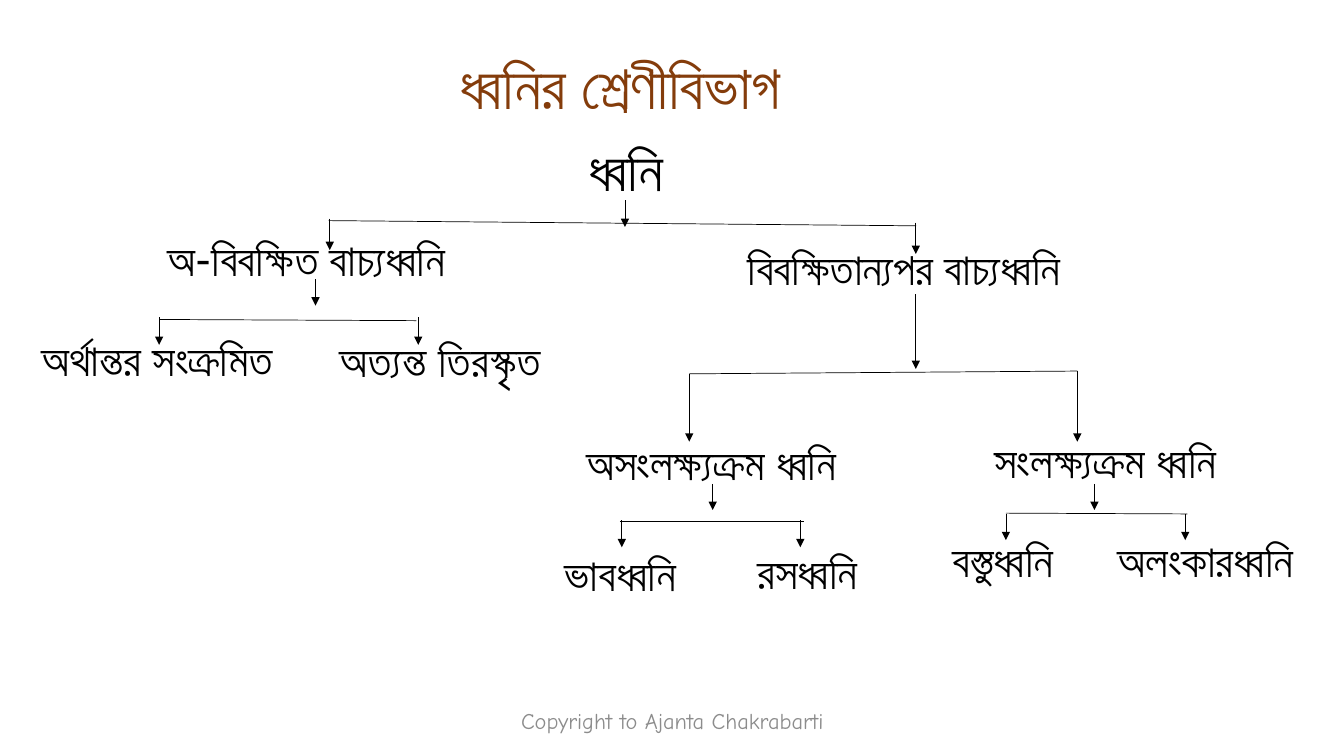
"""Build a slide with a tree of the classes of dhvani."""
from lxml.etree import SubElement
from pptx import Presentation
from pptx.dml.color import RGBColor
from pptx.enum.shapes import MSO_CONNECTOR as Connector
from pptx.enum.text import MSO_ANCHOR as Anchor, PP_ALIGN as Align
from pptx.oxml.ns import qn
from pptx.util import Cm, Pt

COLORS = {"ink": "000000", "title": "843C0B", "footer": "8C8C8C"}
INSET = 0.25
LABEL_HEIGHT = 1.63

TITLE = ("ধ্বনির শ্রেণীবিভাগ", (10.49, 1.07, 10.77, 2.13))
ROOT = ("ধ্বনি", (14.58, 3.3, 2.79, 1.96))
FOOTER = ("Copyright to Ajanta Chakrabarti", (11.23, 17.65, 11.43, 1.02))

# text, left, top, width, indent
LABELS = [
    ("অ-বিবক্ষিত বাচ্যধ্বনি", 3.12, 5.72, 9.25, 0.84),
    ("বিবক্ষিতান্যপর বাচ্যধ্বনি", 18.34, 5.94, 9.25, 0.25),
    ("অর্থান্তর সংক্রমিত", 0.79, 8.23, 6.43, 0),
    ("অত্যন্ত তিরস্কৃত", 8.31, 8.26, 5.82, 0),
    ("অসংলক্ষ্যক্রম ধ্বনি", 14.27, 10.85, 7.39, 0.25),
    ("সংলক্ষ্যক্রম ধ্বনি", 24.56, 10.8, 6.71, 0.25),
    ("ভাবধ্বনি", 13.97, 13.64, 3.4, 0),
    ("রসধ্বনি", 18.59, 13.61, 3.68, 0.25),
    ("বস্তুধ্বনি", 23.5, 13.31, 3.68, 0.25),
    ("অলংকারধ্বনি", 27.91, 13.31, 5.08, 0),
]

# each arrow is x, top, bottom; each bar is x1, y1, x2, y2
BRANCHES = [
    {"stem": (15.75, 5.05, 5.72), "bar": (8.28, 5.56, 23.09, 5.69),
     "drops": [(8.31, 5.51, 6.3), (23.08, 5.61, 6.4)]},
    {"stem": (7.95, 7.04, 7.7), "bar": (4.01, 8.05, 10.49, 8.08),
     "drops": [(4.01, 8.0, 8.69), (10.54, 8.0, 8.69)]},
    {"stem": (23.08, 7.42, 9.3), "bar": (17.37, 9.42, 27.15, 9.35),
     "drops": [(17.37, 9.42, 11.13), (27.15, 9.35, 11.13)]},
    {"stem": (17.96, 12.19, 12.85), "bar": (15.62, 13.13, 20.27, 13.13),
     "drops": [(15.67, 13.11, 13.79), (20.17, 13.11, 13.79)]},
    {"stem": (27.58, 12.19, 12.85), "bar": (25.35, 12.93, 29.92, 12.95),
     "drops": [(25.35, 12.95, 13.61), (29.87, 12.95, 13.61)]},
]


def write(box, text, size=32, font="Lato", color="ink", indent=0,
          align=Align.LEFT, anchor=Anchor.TOP):
    """Put formatted text into a box."""
    frame = box.text_frame
    frame.word_wrap = True
    frame.vertical_anchor = anchor
    frame.margin_left = Cm(INSET + indent)
    frame.margin_right = Cm(INSET if align == Align.CENTER else 0)
    para = frame.paragraphs[0]
    para.alignment = align
    span = para.add_run()
    span.text = text
    span.font.size = Pt(size)
    span.font.name = font
    span.font.color.rgb = RGBColor.from_string(COLORS[color])


def add_text(page, text, place, **style):
    """Add a text box at a place given in centimetres."""
    write(page.shapes.add_textbox(*map(Cm, place)), text, **style)


def add_line(page, x1, y1, x2, y2, arrow=False):
    """Add a thin line, with an arrowhead at its end if wanted."""
    line = page.shapes.add_connector(
        Connector.STRAIGHT, Cm(x1), Cm(y1), Cm(x2), Cm(y2))
    line.line.width = Pt(0.5)
    line.line.color.rgb = RGBColor.from_string(COLORS["ink"])
    if arrow:
        SubElement(line.line._get_or_add_ln(), qn("a:tailEnd"), type="triangle")
    SubElement(line._element.spPr, qn("a:effectLst"))


def main():
    """Draw the title, the labels and the branches, then save."""
    deck = Presentation()
    deck.slide_width, deck.slide_height = Cm(33.87), Cm(19.05)
    page = deck.slides.add_slide(deck.slide_layouts[5])

    text, place = TITLE
    title = page.shapes.title
    title.left, title.top, title.width, title.height = map(Cm, place)
    write(title, text, size=44, color="title", indent=0.84)

    add_text(page, *ROOT, size=40)
    for text, left, top, width, indent in LABELS:
        add_text(page, text, (left, top, width, LABEL_HEIGHT), indent=indent)
    add_text(page, *FOOTER, size=16, font="Comic Neue", color="footer",
             align=Align.CENTER, anchor=Anchor.MIDDLE)

    for branch in BRANCHES:
        add_line(page, *branch["bar"])
        for x, top, bottom in [branch["stem"], *branch["drops"]]:
            add_line(page, x, top, x, bottom, arrow=True)

    deck.save("out.pptx")


if __name__ == "__main__":
    main()
